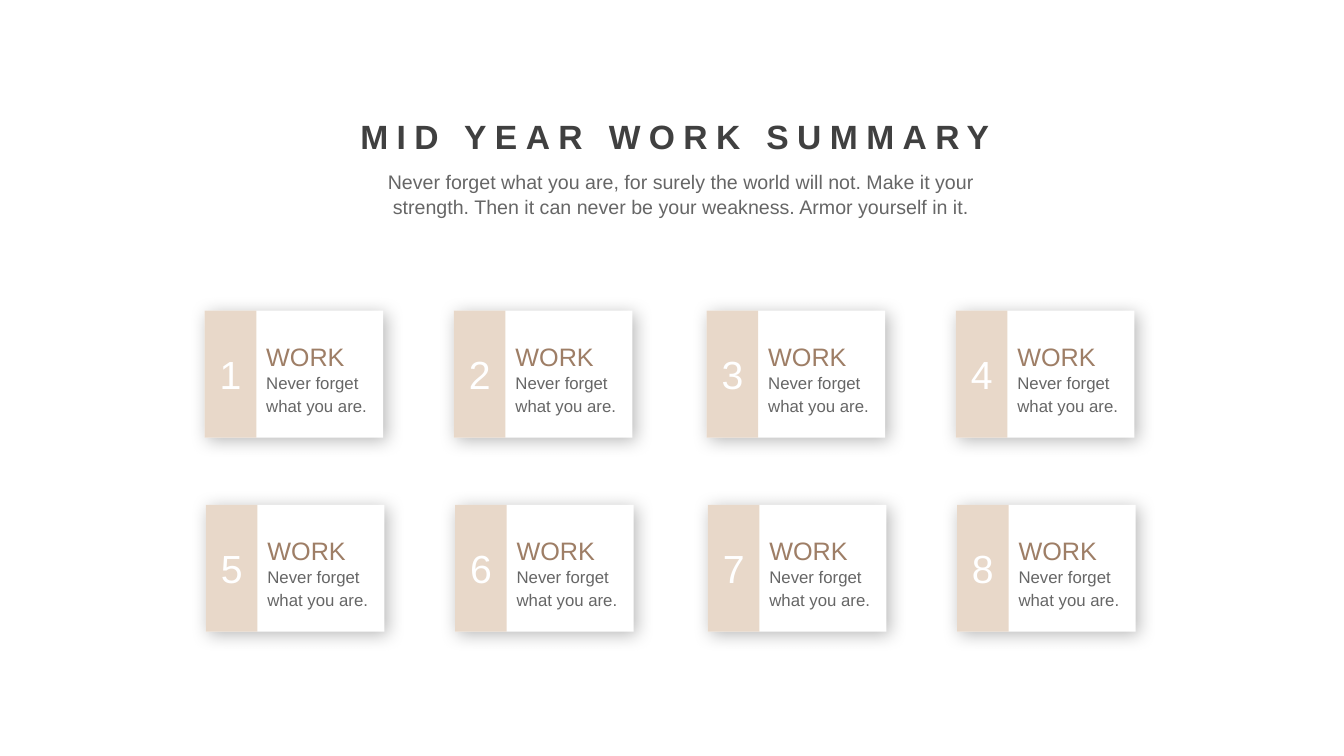
"""Build the mid year work summary slide with its grid of eight numbered cards."""
import dataclasses
import itertools
import typing

import lxml.etree
import pptx
import pptx.dml.color
import pptx.enum.shapes
import pptx.enum.text
import pptx.oxml.ns
import pptx.util

Cm = pptx.util.Cm
Pt = pptx.util.Pt
Align = pptx.enum.text.PP_ALIGN

COLORS = {
    "title": "404040",
    "body": "666666",
    "heading": "9E7E66",
    "band": "E8D8C9",
    "white": "FFFFFF",
    "shadow": "000000",
}
FONT = "Arial"
CARD_WIDTH, CARD_HEIGHT, BAND_WIDTH = 4.5, 3.2, 1.3
COLUMN_LEFTS = (5.16, 11.44, 17.81, 24.09)
ROW_TOPS = (7.83, 12.72)
ROW_SHIFT = 0.03


@dataclasses.dataclass(frozen=True)
class Box:
    left: float
    top: float
    width: float
    height: float

    def lengths(self) -> list[pptx.util.Length]:
        return [Cm(value) for value in dataclasses.astuple(self)]


@dataclasses.dataclass(frozen=True)
class TextStyle:
    size: int
    color: str
    align: Align = Align.LEFT
    line_points: typing.Optional[int] = None
    bold: bool = False
    letter_points: int = 0
    wrap: bool = True


@dataclasses.dataclass(frozen=True)
class Card:
    number: int
    left: float
    top: float
    heading: str = "WORK"
    body: str = "Never forget what you are."


TITLE = TextStyle(24, "title", Align.CENTER, bold=True, letter_points=6, wrap=False)
SUBTITLE = TextStyle(14, "body", Align.CENTER, line_points=18)
NUMBER = TextStyle(28, "white", Align.CENTER)
BODY = TextStyle(12, "body", line_points=16)
HEADING = TextStyle(18, "heading", line_points=30, wrap=False)


def rgb(name: str) -> pptx.dml.color.RGBColor:
    return pptx.dml.color.RGBColor.from_string(COLORS[name])


def write_text(shape, text: str, style: TextStyle) -> None:
    frame = shape.text_frame
    frame.text = text
    frame.word_wrap = style.wrap
    paragraph = frame.paragraphs[0]
    paragraph.alignment = style.align
    if style.line_points:
        paragraph.line_spacing = Pt(style.line_points)
    for run in paragraph.runs:
        run.font.name = FONT
        run.font.size = Pt(style.size)
        run.font.bold = style.bold
        run.font.color.rgb = rgb(style.color)
        if style.letter_points:
            run._r.get_or_add_rPr().set("spc", str(style.letter_points * 100))


def add_text(shapes, box: Box, text: str, style: TextStyle) -> None:
    shape = shapes.add_textbox(*box.lengths())
    write_text(shape, text, style)
    shape.text_frame.auto_size = pptx.enum.text.MSO_AUTO_SIZE.SHAPE_TO_FIT_TEXT


def add_rectangle(shapes, box: Box, color: str):
    shape = shapes.add_shape(pptx.enum.shapes.MSO_SHAPE.RECTANGLE, *box.lengths())
    shape.fill.solid()
    shape.fill.fore_color.rgb = rgb(color)
    shape.line.fill.background()
    shape.shadow.inherit = False
    return shape


def add_soft_shadow(shape) -> None:
    qn = pptx.oxml.ns.qn
    effects = shape._element.spPr.find(qn("a:effectLst"))
    shadow = lxml.etree.SubElement(
        effects, qn("a:outerShdw"), blurRad=str(Pt(13)), dist=str(Pt(3)),
        dir=str(45 * 60000), algn="tl", rotWithShape="0",
    )
    color = lxml.etree.SubElement(shadow, qn("a:srgbClr"), val=COLORS["shadow"])
    lxml.etree.SubElement(color, qn("a:alpha"), val="28000")


def add_card(slide, card: Card) -> None:
    shapes = slide.shapes.add_group_shape().shapes
    panel = add_rectangle(shapes, Box(card.left, card.top, CARD_WIDTH, CARD_HEIGHT), "white")
    add_soft_shadow(panel)
    band = add_rectangle(shapes, Box(card.left, card.top, BAND_WIDTH, CARD_HEIGHT), "band")
    write_text(band, str(card.number), NUMBER)
    band.text_frame.vertical_anchor = pptx.enum.text.MSO_ANCHOR.MIDDLE
    text_left = card.left + BAND_WIDTH
    add_text(shapes, Box(text_left, card.top + 1.39, 3.46, 1.37), card.body, BODY)
    add_text(shapes, Box(text_left, card.top + 0.36, 2.52, 1.22), card.heading, HEADING)


def main() -> None:
    presentation = pptx.Presentation()
    presentation.slide_width = Cm(33.87)
    presentation.slide_height = Cm(19.05)
    slide = presentation.slides.add_slide(presentation.slide_layouts[6])
    add_text(slide.shapes, Box(8.64, 2.8, 16.74, 1.28), "MID YEAR WORK SUMMARY", TITLE)
    add_text(
        slide.shapes,
        Box(8.59, 4.11, 17.15, 1.5),
        "Never forget what you are, for surely the world will not. "
        "Make it your strength. Then it can never be your weakness. "
        "Armor yourself in it.",
        SUBTITLE,
    )
    cells = itertools.product(enumerate(ROW_TOPS), COLUMN_LEFTS)
    for number, ((row, top), left) in enumerate(cells, start=1):
        add_card(slide, Card(number, left + row * ROW_SHIFT, top))
    presentation.save("out.pptx")


if __name__ == "__main__":
    main()
